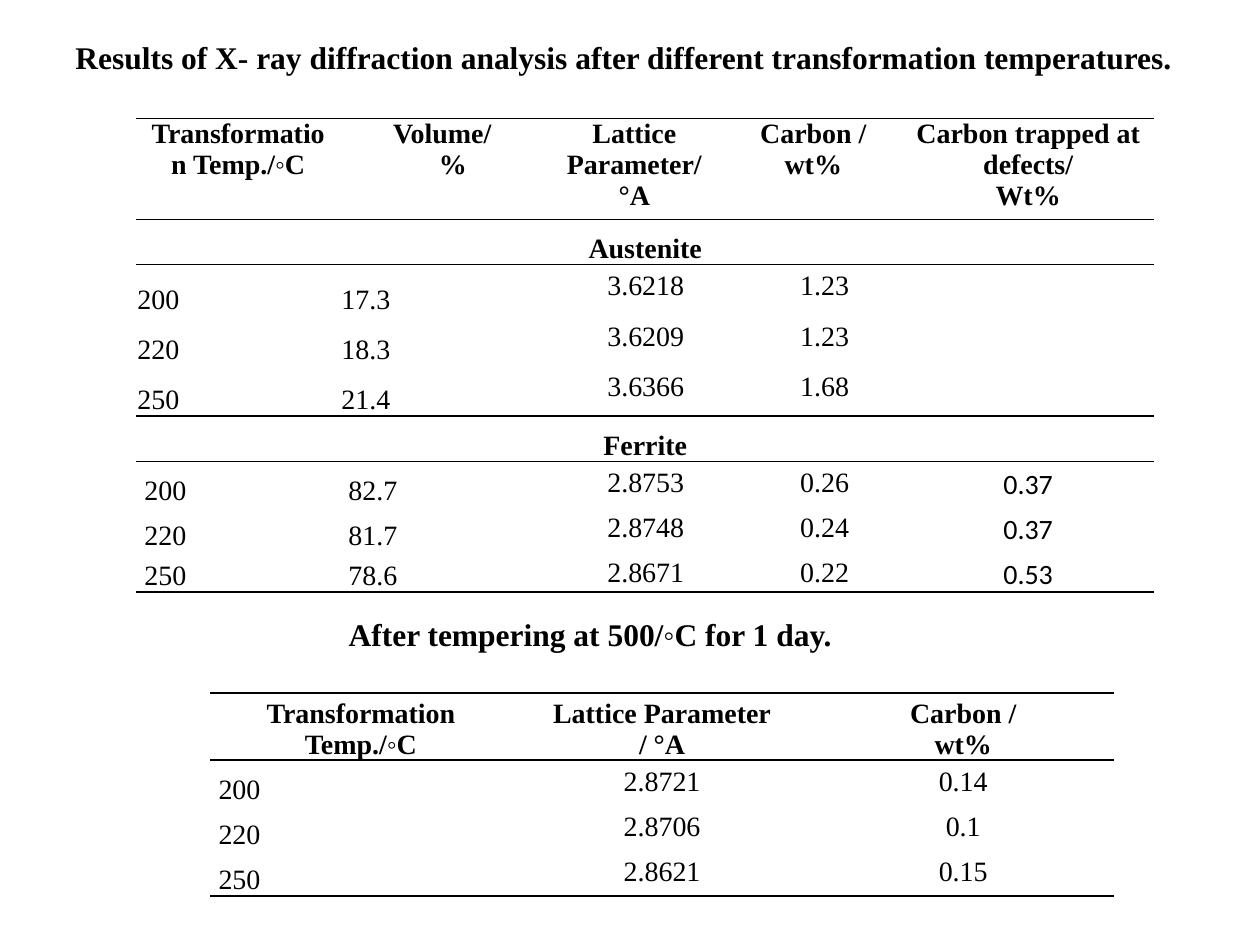
"""Build the X-ray diffraction results slide with its two ruled tables."""
import pptx
import pptx.util
import pptx.dml.color
import pptx.enum.text
import pptx.oxml

Pt = pptx.util.Pt
ALIGN = pptx.enum.text.PP_ALIGN
ANCHOR = pptx.enum.text.MSO_ANCHOR
BLACK = pptx.dml.color.RGBColor(0, 0, 0)
SERIF, SANS = "Times New Roman", "Calibri"
NS = 'xmlns:a="http://schemas.openxmlformats.org/drawingml/2006/main"'

TITLES = [
    ("Results of X- ray diffraction analysis after different transformation temperatures.",
     (36, 18, 648, 28.8)),
    ("After tempering at 500/◦C for 1 day.", (192.2, 347.8, 311.8, 28.8)),
]

PHASES = {
    "at": (77.8, 67.7),
    "cols": [116.6, 116.6, 103, 13, 88.6, 144],
    "rows": [57.7] + [25.9] * 7 + [22.5],
    "rules": {0, 1, 2, 5, 6, 9},
    "header": ["Transformation Temp./◦C", "Volume/\n%", "Lattice Parameter/ °A",
               "Carbon /\nwt%", None, "Carbon trapped at defects/\nWt%"],
    "header_anchor": ANCHOR.TOP,
    "body": [
        ["Austenite"],
        ["200", "17.3", "3.6218", None, "1.23", ""],
        ["220", "18.3", "3.6209", None, "1.23", ""],
        ["250", "21.4", "3.6366", None, "1.68", ""],
        ["Ferrite"],
        ["200", "82.7", "2.8753", None, "0.26", "0.37"],
        ["220", "81.7", "2.8748", None, "0.24", "0.37"],
        ["250", "78.6", "2.8671", None, "0.22", "0.53"],
    ],
    "left_cols": 2,
    "indent_from": 6,
}
TEMPERED = {
    "at": (120.2, 396),
    "cols": [172.1] * 3,
    "rows": [38.3] + [25.9] * 3,
    "rules": {0, 1, 4},
    "header": ["Transformation Temp./◦C", "Lattice Parameter\n/ °A", "Carbon /\nwt%"],
    "header_anchor": ANCHOR.BOTTOM,
    "body": [
        ["200", "2.8721", "0.14"],
        ["220", "2.8706", "0.1"],
        ["250", "2.8621", "0.15"],
    ],
    "left_cols": 1,
    "indent_from": 1,
}

HEAD = {"margin_left": Pt(5), "margin_right": Pt(5), "margin_top": 0, "margin_bottom": 0}
DATA = {"margin_left": Pt(0.72), "margin_right": Pt(0.72), "margin_top": Pt(0.72),
        "margin_bottom": 0}
HEAD_PARA = {"alignment": ALIGN.CENTER}
DATA_PARA = {"line_spacing": 1.15, "space_after": Pt(10)}


def apply(obj, values):
    for name, value in values.items():
        setattr(obj, name, value)


def add_run(p, text, size, bold, font=SERIF):
    r = p.add_run()
    r.text = text
    apply(r.font, {"name": font, "size": Pt(size), "bold": bold})
    r.font.color.rgb = BLACK


def write_cell(cell, text, cell_format, para_format, bold, font=SERIF):
    apply(cell, cell_format)
    tf = cell.text_frame
    for i, line in enumerate(text.split("\n")):
        p = tf.add_paragraph() if i else tf.paragraphs[0]
        apply(p, para_format)
        if line == "%":
            p._p.get_or_add_pPr().set("marL", str(Pt(12)))
        add_run(p, line, 16, bold, font)


def rule_cell(cell, top, bottom):
    cell.fill.background()
    tcPr = cell._tc.get_or_add_tcPr()
    sides = {"lnL": False, "lnR": False, "lnT": top, "lnB": bottom}
    for i, (side, drawn) in enumerate(sides.items()):
        fill = f'<a:solidFill><a:srgbClr val="{BLACK}"/></a:solidFill>' if drawn else "<a:noFill/>"
        tcPr.insert(i, pptx.oxml.parse_xml(f'<a:{side} {NS} w="{Pt(1)}">{fill}</a:{side}>'))


def add_table(s, data):
    cols, rows = data["cols"], data["rows"]
    x, y = data["at"]
    table = s.shapes.add_table(len(rows), len(cols), Pt(x), Pt(y),
                               Pt(sum(cols)), Pt(sum(rows))).table
    apply(table, {"first_row": False, "horz_banding": False})
    for col, width in zip(table.columns, cols):
        col.width = Pt(width)
    for row, height in zip(table.rows, rows):
        row.height = Pt(height)

    for i, texts in enumerate([data["header"]] + data["body"]):
        section = len(texts) == 1
        for j in range(len(cols)):
            rule_cell(table.cell(i, j), i in data["rules"], i + 1 in data["rules"])
        if section:
            table.cell(i, 0).merge(table.cell(i, len(cols) - 1))
        for j, text in enumerate(texts):
            cell = table.cell(i, j)
            if text is None:
                cell.merge(table.cell(i, j - 1))
            elif i == 0 or section:
                anchor = ANCHOR.BOTTOM if section else data["header_anchor"]
                write_cell(cell, text, {**HEAD, "vertical_anchor": anchor}, HEAD_PARA, True)
            elif text:
                left = j < data["left_cols"]
                look = {**DATA, "vertical_anchor": ANCHOR.BOTTOM if left else ANCHOR.TOP}
                if left and i >= data["indent_from"]:
                    look["margin_left"] = Pt(4.72)
                para = {**DATA_PARA, "alignment": ALIGN.LEFT if left else ALIGN.CENTER}
                write_cell(cell, text, look, para, False, SANS if j == 5 else SERIF)


def main():
    prs = pptx.Presentation()
    apply(prs, {"slide_width": Pt(720), "slide_height": Pt(540)})
    s = prs.slides.add_slide(prs.slide_layouts[6])
    for text, box in TITLES:
        tf = s.shapes.add_textbox(*map(Pt, box)).text_frame
        tf.word_wrap = True
        add_run(tf.paragraphs[0], text, 18, True)
    for data in (PHASES, TEMPERED):
        add_table(s, data)
    prs.save("out.pptx")


if __name__ == "__main__":
    main()
